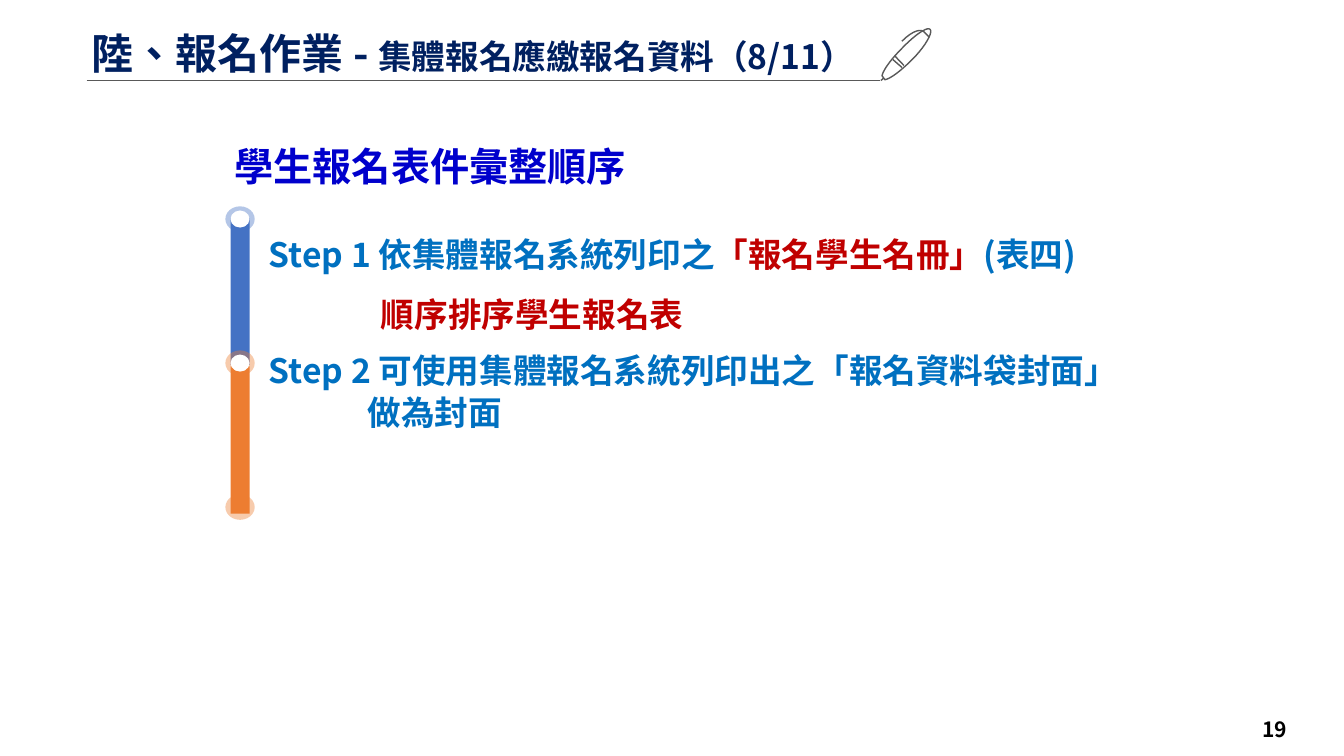
from dataclasses import dataclass

import pptx
import pptx.dml.color
import pptx.enum.shapes
import pptx.enum.text
import pptx.oxml
import pptx.oxml.ns
import pptx.util
from pptx.util import Cm

FONT = "Noto Sans CJK SC"
NAVY, BLUE, RED = "002060", "0070C0", "C00000"
GRAY, BLACK, WHITE = "595959", "000000", "FFFFFF"
SHAPE = pptx.enum.shapes.MSO_SHAPE
ALIGN = pptx.enum.text.PP_ALIGN
ANCHOR = pptx.enum.text.MSO_ANCHOR
Point = tuple[float, float]


@dataclass
class Span:
    text: str
    color: str
    size: float = 24


@dataclass
class Line:
    spans: list[Span]
    indent: float = 0
    before: float = 0


@dataclass
class Stage:
    color: str
    nodes: int  # circles that start or end this stage


STEPS = [
    Line([Span("Step 1 依集體報名系統列印之", BLUE), Span("「報名學生名冊」", RED),
          Span("(表四)", BLUE)]),
    Line([Span("順序排序學生報名表", RED)], indent=2.82, before=14.5),
    Line([Span("Step 2 可使用集體報名系統列印出之「報名資料袋封面」", BLUE)], before=11),
    Line([Span("做為封面", BLUE)], indent=2.49, before=1),
]
STAGES = [Stage("4472C4", 1), Stage("ED7D31", 2)]


def rgb(color: str):
    return pptx.dml.color.RGBColor.from_string(color)


def add_run(p, text: str, *, color: str, size: float) -> None:
    r = p.add_run()
    r.text = text
    r.font.name, r.font.bold = FONT, True
    r.font.size = pptx.util.Pt(size)
    r.font.color.rgb = rgb(color)
    rPr = r._r.get_or_add_rPr()
    rPr.set("lang", "zh-TW")
    ea = pptx.oxml.parse_xml(f'<a:ea {pptx.oxml.ns.nsdecls("a")} typeface="{FONT}"/>')
    rPr.find(pptx.oxml.ns.qn("a:latin")).addnext(ea)


def write(sp, lines: list[Line], *, align=ALIGN.LEFT, anchor=ANCHOR.TOP,
          spacing: float = 1.0, top: float = 0.13) -> None:
    tf = sp.text_frame
    tf.word_wrap = True
    tf.auto_size = pptx.enum.text.MSO_AUTO_SIZE.NONE
    tf.vertical_anchor = anchor
    tf.margin_left = tf.margin_right = Cm(0.25)
    tf.margin_top, tf.margin_bottom = Cm(top), Cm(0.13)
    for i, line in enumerate(lines):
        p = tf.add_paragraph() if i else tf.paragraphs[0]
        p.alignment, p.line_spacing = align, spacing
        p.space_before = pptx.util.Pt(line.before)
        p._p.get_or_add_pPr().set("marL", str(Cm(line.indent)))
        for span in line.spans:
            add_run(p, span.text, color=span.color, size=span.size)


def add_text(s, left: float, top: float, width: float, height: float):
    return s.shapes.add_textbox(Cm(left), Cm(top), Cm(width), Cm(height))


def add_centred(s, kind, x: float, y: float, width: float, height: float,
                color: str, alpha: int = 100) -> None:
    sp = s.shapes.add_shape(kind, Cm(x - width / 2), Cm(y - height / 2),
                            Cm(width), Cm(height))
    sp.shadow.inherit = False
    sp.line.fill.background()
    sp.fill.solid()
    sp.fill.fore_color.rgb = rgb(color)
    if alpha < 100:
        clr = sp._element.spPr.find(".//" + pptx.oxml.ns.qn("a:srgbClr"))
        clr.append(pptx.oxml.parse_xml(
            f'<a:alpha {pptx.oxml.ns.nsdecls("a")} val="{alpha * 1000}"/>'))


def curve(a: Point, b: Point, c: Point, d: Point, n: int = 10) -> list[Point]:
    """Points along a cubic Bezier curve."""
    ts = [i / n for i in range(n + 1)]
    return [tuple((1 - t) ** 3 * a[k] + 3 * (1 - t) ** 2 * t * b[k]
                  + 3 * (1 - t) * t ** 2 * c[k] + t ** 3 * d[k] for k in (0, 1))
            for t in ts]


def add_pen(s) -> None:
    cap, upper, nib = (23.44, 0.74), (22.71, 1.24), (22.23, 1.91)
    heel, lower = (22.3, 2.01), (22.99, 1.5)
    body = (curve(cap, (23.37, 0.66), (23.04, 0.89), upper)
            + curve(upper, (22.45, 1.5), (22.25, 1.78), nib)
            + curve(heel, (22.45, 1.98), (22.71, 1.78), lower)
            + curve(lower, (23.32, 1.17), (23.52, 0.81), cap))
    clip = [(23.42, 0.94)] + curve((23.27, 0.79), (23.27, 0.79), (23.11, 0.66), (22.73, 1.04))
    bands = [[(22.73, 1.7), (22.5, 1.5)], [(22.56, 1.42), (22.78, 1.65)]]
    tip = [(22.28, 1.96), (22.2, 2.03)]
    contours = [[(Cm(x), Cm(y)) for x, y in c] for c in (body, *bands, tip, clip)]
    fb = s.shapes.build_freeform(*contours[0][0])
    for i, contour in enumerate(contours):
        if i:
            fb.move_to(*contour[0])
        fb.add_line_segments(contour[1:], close=(i == 0))
    sp = fb.convert_to_shape()
    sp.shadow.inherit = False
    sp.fill.background()
    sp.line.color.rgb = rgb(GRAY)
    sp.line.width = pptx.util.Pt(1)


def add_rule(s) -> None:
    cx = s.shapes.add_connector(pptx.enum.shapes.MSO_CONNECTOR.STRAIGHT,
                                Cm(2.18), Cm(2.03), Cm(22.17), Cm(2.03))
    cx.line.color.rgb = rgb(GRAY)
    cx.line.width = pptx.util.Pt(0.5)
    cx._element.spPr.append(
        pptx.oxml.parse_xml(f'<a:effectLst {pptx.oxml.ns.nsdecls("a")}/>'))


def add_timeline(s) -> None:
    x = 6.05
    for i, stage in enumerate(STAGES):
        add_centred(s, SHAPE.RECTANGLE, x, 7.35 + 3.74 * i, 0.48, 3.71, stage.color)
    colors = [stage.color for stage in STAGES for _ in range(stage.nodes)]
    for i, color in enumerate(colors):
        y = 5.52 + 3.63 * i
        add_centred(s, SHAPE.OVAL, x, y, 0.74, 0.64, color, alpha=40)
        if i < len(colors) - 1:
            add_centred(s, SHAPE.OVAL, x, y, 0.48, 0.43, WHITE)


def main() -> None:
    prs = pptx.Presentation()
    prs.slide_width, prs.slide_height = Cm(33.87), Cm(19.05)
    s = prs.slides.add_slide(prs.slide_layouts[5])

    # Title with its rule and pen
    add_rule(s)
    add_pen(s)
    title = s.shapes.title
    title.left, title.top, title.width, title.height = Cm(2.06), Cm(0.84), Cm(20.04), Cm(1.22)
    write(title, [Line([Span("陸、報名作業 - ", NAVY, 30),
                        Span("集體報名應繳報名資料（8/11）", NAVY)])], spacing=0.9, top=0)

    # Steps beside the timeline
    write(add_text(s, 6.53, 5.31, 22.3, 6.58), STEPS, top=0.58)
    write(add_text(s, 5.66, 3.45, 10.49, 1.45),
          [Line([Span("學生報名表件彙整順序", "0000CC", 28)])])
    add_timeline(s)

    # Page number
    write(add_text(s, 26.62, 18.01, 6.07, 0.74), [Line([Span("19", BLACK, 15)])],
          align=ALIGN.RIGHT, anchor=ANCHOR.MIDDLE)
    prs.save("out.pptx")


if __name__ == "__main__":
    main()
